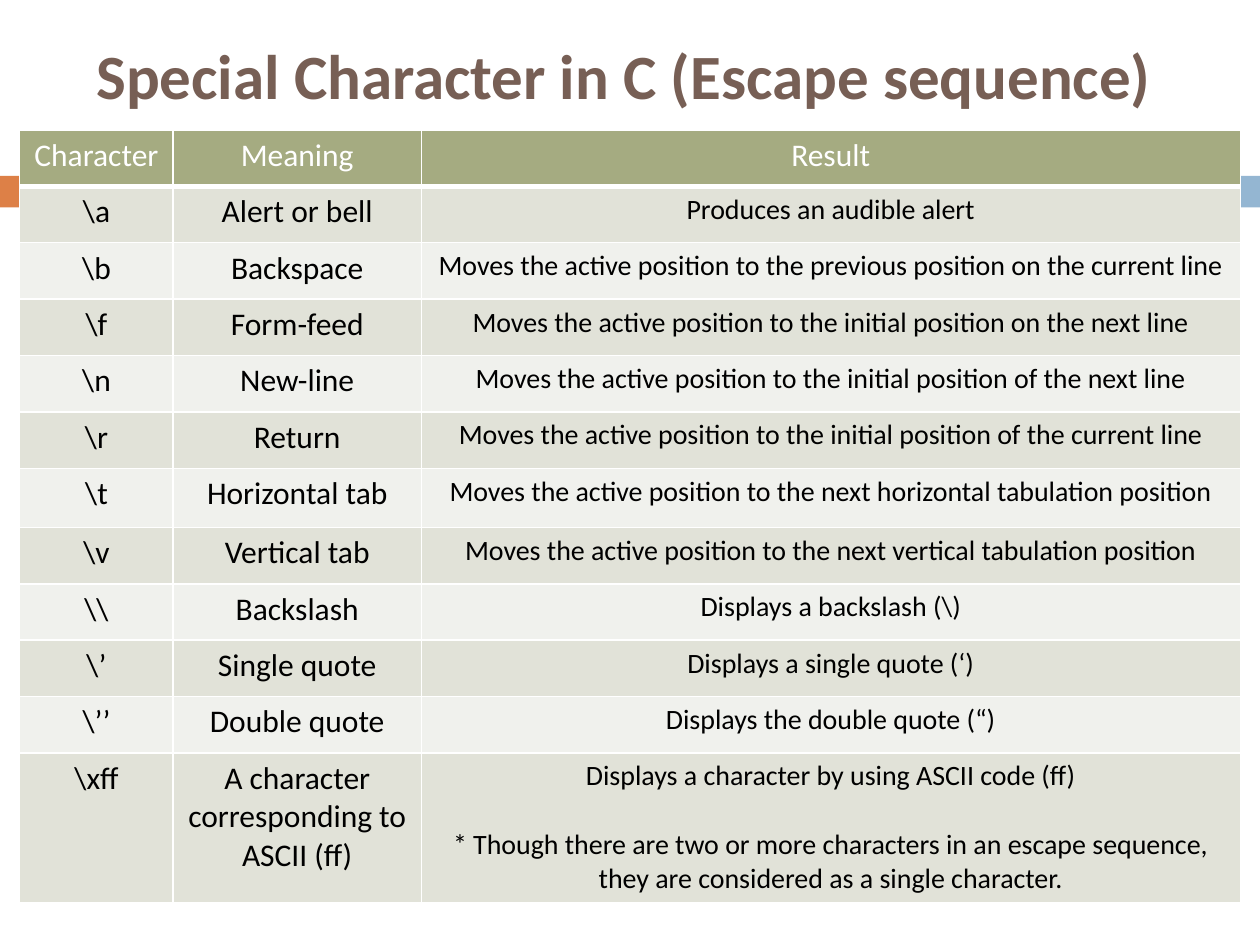
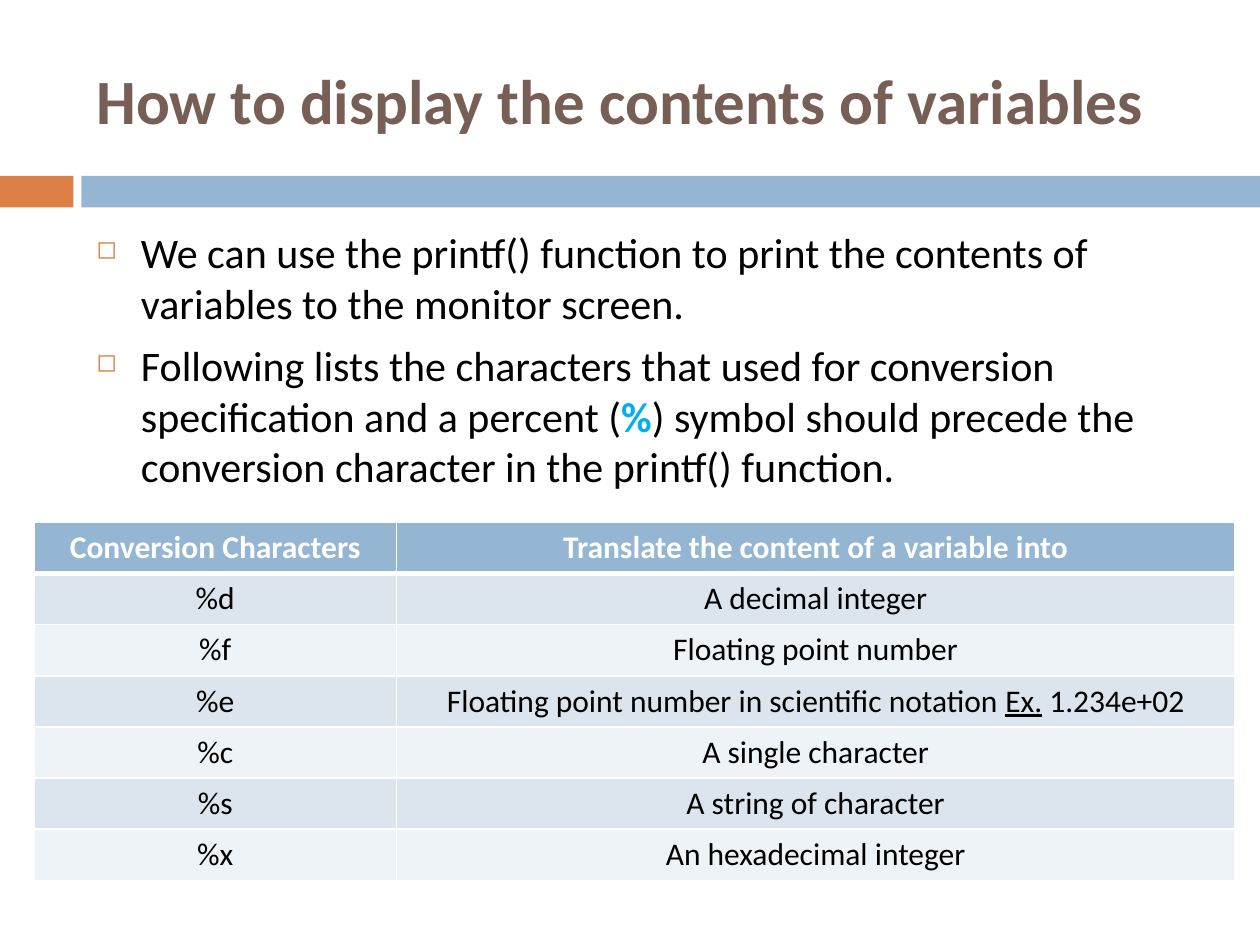
"""Build two slides on C escape sequences and printf conversion characters."""
import dataclasses
import typing

import lxml.etree
import pptx
import pptx.dml.color
import pptx.enum.shapes
import pptx.enum.text
import pptx.oxml.ns
import pptx.slide
import pptx.table
import pptx.text.text
import pptx.util

EMU_PER_PX = 9525


@dataclasses.dataclass(frozen=True)
class Theme:
    font: str = "Calibri"
    title: str = "775F55"
    text: str = "000000"
    white: str = "FFFFFF"
    orange: str = "DD8047"
    blue: str = "94B6D2"
    highlight: str = "00B0F0"
    title_pt: int = 36
    body_pt: int = 24
    cell_pt: int = 18
    detail_pt: int = 16
    border_pt: int = 1
    header_border_pt: int = 3


THEME = Theme()


class Box(typing.NamedTuple):
    x: int
    y: int
    w: int
    h: int

    def emu(self) -> list[int]:
        return [px(v) for v in self]


class Run(typing.NamedTuple):
    text: str
    fmt: dict[str, typing.Any] = {}


class Band(typing.NamedTuple):
    box: Box
    color: str


@dataclasses.dataclass(frozen=True)
class Grid:
    x: int
    y: int
    cols: list[int]
    heights: list[int]
    rows: list[tuple]
    header_fill: str
    stripes: tuple[str, str]
    header_bold: bool
    sizes: tuple[int, ...]


BANDS = [Band(Box(0, 134, 56, 24), THEME.orange), Band(Box(62, 134, 898, 24), THEME.blue)]

BULLETS = [
    [Run("We can use the printf() function to print the contents of variables to the monitor screen.")],
    [
        Run("Following lists the characters that used for conversion specification and a percent ("),
        Run("%", {"color": THEME.highlight, "bold": True}),
        Run(") symbol should precede the conversion character in the printf() function."),
    ],
]

ESCAPES = Grid(
    x=15, y=99, cols=[117, 189, 624], heights=[43] * 6 + [45] + [43] * 4 + [114],
    rows=[
        ("Character", "Meaning", "Result"),
        (r"\a", "Alert or bell", "Produces an audible alert"),
        (r"\b", "Backspace", "Moves the active position to the previous position on the current line"),
        (r"\f", "Form-feed", "Moves the active position to the initial position on the next line"),
        (r"\n", "New-line", "Moves the active position to the initial position of the next line"),
        (r"\r", "Return", "Moves the active position to the initial position of the current line"),
        (r"\t", "Horizontal tab", "Moves the active position to the next horizontal tabulation position"),
        (r"\v", "Vertical tab", "Moves the active position to the next vertical tabulation position"),
        (r"\\", "Backslash", r"Displays a backslash (\)"),
        (r"\’", "Single quote", "Displays a single quote (‘)"),
        (r"\’’", "Double quote", "Displays the double quote (“)"),
        (r"\xff", "A character corresponding to ASCII (ff)", [
            [Run("Displays a character by using ASCII code (ff)")],
            [Run("* Though there are two or more characters in an escape sequence, "
                 "they are considered as a single character.")],
        ]),
    ],
    header_fill="A5AB81", stripes=("E1E2D8", "F0F1ED"), header_bold=False,
    sizes=(THEME.cell_pt, THEME.cell_pt, THEME.detail_pt),
)

CONVERSIONS = Grid(
    x=26, y=398, cols=[276, 639], heights=[39] * 7,
    rows=[
        ("Conversion Characters", "Translate the content of a variable into"),
        ("%d", "A decimal integer"),
        ("%f", "Floating point number"),
        ("%e", [[
            Run("Floating point number in scientific notation "),
            Run("Ex.", {"underline": True}),
            Run(" 1.234e+02"),
        ]]),
        ("%c", "A single character"),
        ("%s", "A string of character"),
        ("%x", "An hexadecimal integer"),
    ],
    header_fill=THEME.blue, stripes=("DCE5EE", "EEF3F7"), header_bold=True,
    sizes=(THEME.cell_pt, THEME.cell_pt),
)


def px(value: int) -> int:
    return pptx.util.Emu(value * EMU_PER_PX)


def rgb(color: str) -> pptx.dml.color.RGBColor:
    return pptx.dml.color.RGBColor.from_string(color)


def sub(parent: typing.Any, tag: str, **attrs: str) -> typing.Any:
    return lxml.etree.SubElement(parent, pptx.oxml.ns.qn(tag), attrs)


def style(obj: typing.Any, fmt: dict[str, typing.Any]) -> None:
    for name, value in fmt.items():
        if name == "color":
            obj.color.rgb = rgb(value)
        else:
            setattr(obj, name, value)


def write(tf: pptx.text.text.TextFrame, paras: list[list[Run]],
          font: dict[str, typing.Any], para: dict[str, typing.Any]) -> None:
    base = {"name": THEME.font, "color": THEME.text, "bold": False} | font
    for i, runs in enumerate(paras):
        p = tf.paragraphs[0] if i == 0 else tf.add_paragraph()
        style(p, para)
        for run in runs:
            r = p.add_run()
            r.text = run.text
            style(r.font, base | run.fmt)


def add_text(s: pptx.slide.Slide, box: Box, paras: list[list[Run]], font: dict[str, typing.Any],
             frame: dict[str, typing.Any], para: dict[str, typing.Any]) -> pptx.text.text.TextFrame:
    tf = s.shapes.add_textbox(*box.emu()).text_frame
    style(tf, {"word_wrap": True} | frame)
    write(tf, paras, font, para)
    return tf


def add_bullets(s: pptx.slide.Slide, box: Box, paras: list[list[Run]]) -> None:
    tf = add_text(s, box, paras, {"size": pptx.util.Pt(THEME.body_pt)}, {},
                  {"space_before": pptx.util.Pt(7)})
    for p in tf.paragraphs:
        ppr = p._p.get_or_add_pPr()
        ppr.set("marL", str(px(34)))
        ppr.set("indent", str(px(-34)))
        sub(sub(ppr, "a:buClr"), "a:srgbClr", val=THEME.orange)
        sub(ppr, "a:buSzPct", val="60000")
        sub(ppr, "a:buChar", char="◻")


def set_borders(cell: pptx.table._Cell, row: int) -> None:
    widths = dict.fromkeys(("a:lnL", "a:lnR", "a:lnT", "a:lnB"), THEME.border_pt)
    if row < 2:
        widths["a:lnT" if row else "a:lnB"] = THEME.header_border_pt
    tcpr = cell._tc.get_or_add_tcPr()
    for tag, width in widths.items():
        ln = sub(tcpr, tag, w=str(pptx.util.Pt(width)))
        sub(sub(ln, "a:solidFill"), "a:srgbClr", val=THEME.white)


def add_grid(s: pptx.slide.Slide, grid: Grid) -> None:
    box = Box(grid.x, grid.y, sum(grid.cols), sum(grid.heights))
    table = s.shapes.add_table(len(grid.rows), len(grid.cols), *box.emu()).table
    table.horz_banding = False
    for col, width in zip(table.columns, grid.cols):
        col.width = px(width)
    for row, height in zip(table.rows, grid.heights):
        row.height = px(height)
    for i, values in enumerate(grid.rows):
        for j, value in enumerate(values):
            cell = table.cell(i, j)
            set_borders(cell, i)
            cell.fill.solid()
            cell.fill.fore_color.rgb = rgb(grid.stripes[(i - 1) % 2] if i else grid.header_fill)
            font = {"size": pptx.util.Pt(grid.sizes[j] if i else THEME.cell_pt)}
            if i == 0:
                font |= {"color": THEME.white, "bold": grid.header_bold}
            paras = [[Run(value)]] if isinstance(value, str) else value
            write(cell.text_frame, paras, font, {"alignment": pptx.enum.text.PP_ALIGN.CENTER})
            for p in cell.text_frame.paragraphs[1:]:
                p.space_before = pptx.util.Pt(19.5)


def add_slide(prs: typing.Any, title: str, title_y: int) -> pptx.slide.Slide:
    s = prs.slides.add_slide(prs.slide_layouts[6])
    for band in BANDS:
        sp = s.shapes.add_shape(pptx.enum.shapes.MSO_SHAPE.RECTANGLE, *band.box.emu())
        sp.shadow.inherit = False
        sp.fill.solid()
        sp.fill.fore_color.rgb = rgb(band.color)
        sp.line.fill.background()
    add_text(s, Box(64, title_y, 856, 104), [[Run(title)]],
             {"size": pptx.util.Pt(THEME.title_pt), "color": THEME.title, "bold": True},
             {"vertical_anchor": pptx.enum.text.MSO_ANCHOR.MIDDLE}, {})
    return s


def main() -> None:
    prs = pptx.Presentation()
    style(prs, {"slide_width": px(960), "slide_height": px(720)})
    s = add_slide(prs, "Special Character in C (Escape sequence)", 5)
    add_grid(s, ESCAPES)
    s = add_slide(prs, "How to display the contents of variables", 24)
    add_bullets(s, Box(64, 168, 856, 245), BULLETS)
    add_grid(s, CONVERSIONS)
    prs.save("out.pptx")


if __name__ == "__main__":
    main()
